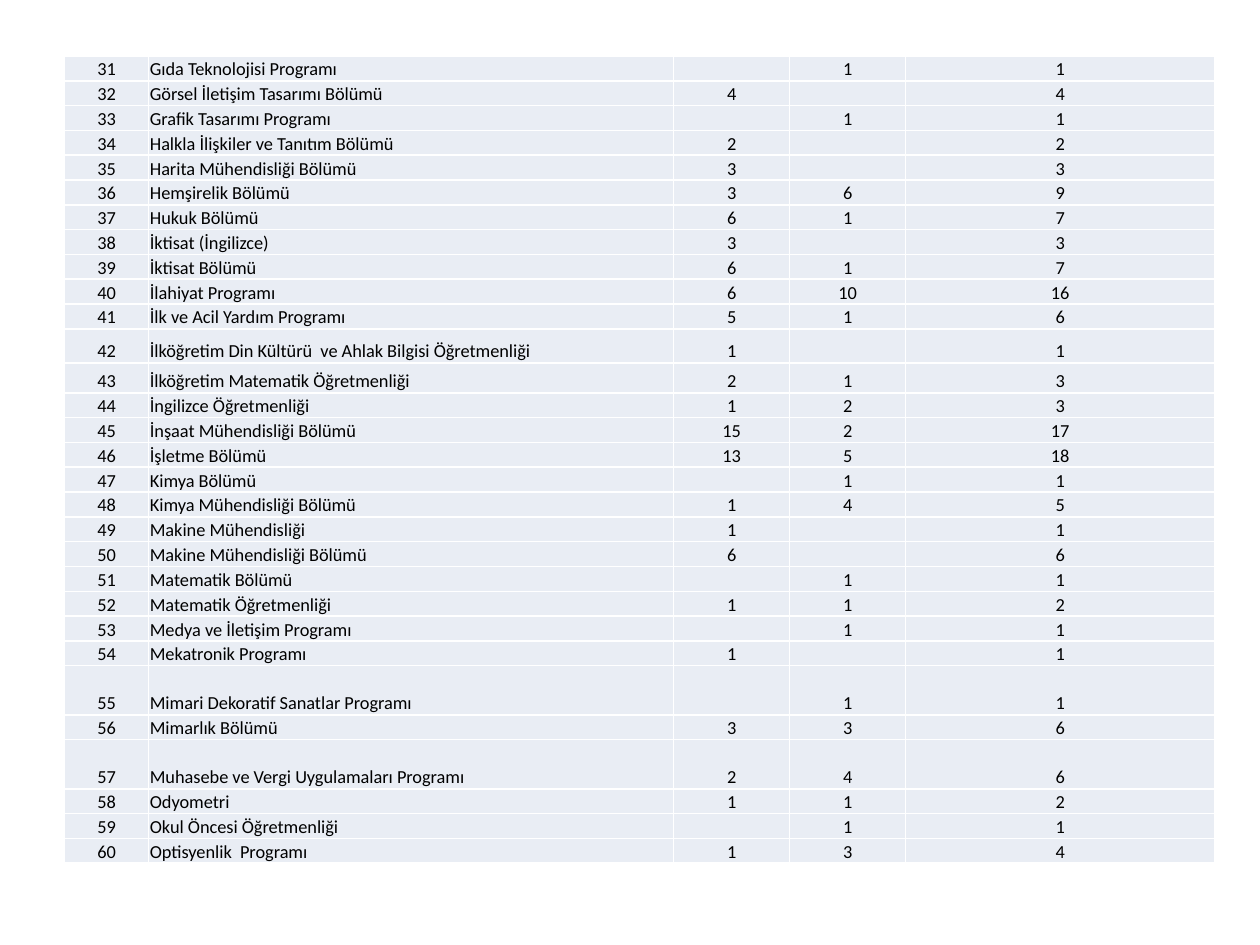
from dataclasses import dataclass

from pptx import Presentation
from pptx.dml.color import RGBColor as RGB
from pptx.enum.text import MSO_ANCHOR as Anchor, PP_ALIGN as Align
from pptx.oxml.ns import qn
from pptx.util import Pt
from lxml.etree import SubElement as Sub


@dataclass(frozen=True)
class Theme:
    font: str = "Calibri"
    size: float = 10.5
    ink: str = "000000"
    fill: str = "E9EDF4"
    rule: str = "FFFFFF"
    rule_w: float = 1
    inset: float = 0.7


# Programme, first count, second count; the last column is their sum
FIRST = 31
ROWS = [
    ("Gıda Teknolojisi Programı", 0, 1),
    ("Görsel İletişim Tasarımı Bölümü", 4, 0),
    ("Grafik Tasarımı Programı", 0, 1),
    ("Halkla İlişkiler ve Tanıtım Bölümü", 2, 0),
    ("Harita Mühendisliği Bölümü", 3, 0),
    ("Hemşirelik Bölümü", 3, 6),
    ("Hukuk Bölümü", 6, 1),
    ("İktisat (İngilizce)", 3, 0),
    ("İktisat Bölümü", 6, 1),
    ("İlahiyat Programı", 6, 10),
    ("İlk ve Acil Yardım Programı", 5, 1),
    ("İlköğretim Din Kültürü  ve Ahlak Bilgisi Öğretmenliği", 1, 0),
    ("İlköğretim Matematik Öğretmenliği", 2, 1),
    ("İngilizce Öğretmenliği", 1, 2),
    ("İnşaat Mühendisliği Bölümü", 15, 2),
    ("İşletme Bölümü", 13, 5),
    ("Kimya Bölümü", 0, 1),
    ("Kimya Mühendisliği Bölümü", 1, 4),
    ("Makine Mühendisliği", 1, 0),
    ("Makine Mühendisliği Bölümü", 6, 0),
    ("Matematik Bölümü", 0, 1),
    ("Matematik Öğretmenliği", 1, 1),
    ("Medya ve İletişim Programı", 0, 1),
    ("Mekatronik Programı", 1, 0),
    ("Mimari Dekoratif Sanatlar Programı", 0, 1),
    ("Mimarlık Bölümü", 3, 3),
    ("Muhasebe ve Vergi Uygulamaları Programı", 2, 4),
    ("Odyometri", 1, 1),
    ("Okul Öncesi Öğretmenliği", 0, 1),
    ("Optisyenlik  Programı", 1, 3),
]
COLS = [48, 300, 66.3, 66.3, 176.6]
ROW_H = 14.2
TALL = {42: 19.4, 43: 17.2, 55: 28.1, 57: 28.1}


class Deck:
    def __init__(self, theme, wide, high):
        self.theme = theme
        self.prs = Presentation()
        self.prs.slide_width, self.prs.slide_height = Pt(wide), Pt(high)
        self.slide = self.prs.slides.add_slide(self.prs.slide_layouts[6])

    def table(self, left, top, cols, highs, rows):
        frame = self.slide.shapes.add_table(
            len(rows), len(cols), Pt(left), Pt(top),
            Pt(sum(cols)), Pt(sum(highs)))
        grid = frame.table
        grid.first_row = grid.horz_banding = False
        for col, wide in zip(grid.columns, cols):
            col.width = Pt(wide)
        for row, high, vals in zip(grid.rows, highs, rows):
            row.height = Pt(high)
            for i, (cell, val) in enumerate(zip(row.cells, vals)):
                self.cell(cell, val, Align.LEFT if i == 1 else Align.CENTER)

    def cell(self, cell, val, align):
        look = self.theme
        cell.vertical_anchor = Anchor.BOTTOM
        cell.margin_left = cell.margin_right = cell.margin_top = Pt(look.inset)
        cell.margin_bottom = 0
        self.edges(cell)
        cell.fill.solid()
        cell.fill.fore_color.rgb = RGB.from_string(look.fill)
        para = cell.text_frame.paragraphs[0]
        para.alignment = align
        if val:
            run = para.add_run()
            run.text = str(val)
            run.font.name, run.font.size = look.font, Pt(look.size)
            run.font.color.rgb = RGB.from_string(look.ink)
        else:
            # An empty cell needs its own size, or the row grows
            Sub(para._p, qn("a:endParaRPr"), sz=str(int(look.size * 100)))

    def edges(self, cell):
        props = cell._tc.get_or_add_tcPr()
        for side in "LRTB":
            line = Sub(props, qn(f"a:ln{side}"), w=str(Pt(self.theme.rule_w)))
            paint = Sub(line, qn("a:solidFill"))
            Sub(paint, qn("a:srgbClr"), val=self.theme.rule)

    def save(self):
        self.prs.save("out.pptx")


def main():
    deck = Deck(Theme(), 720, 540)
    # Programme list with counts and totals
    rows = [(num, name, one, two, one + two)
            for num, (name, one, two) in enumerate(ROWS, FIRST)]
    highs = [TALL.get(row[0], ROW_H) for row in rows]
    deck.table(37, 32, COLS, highs, rows)
    deck.save()


if __name__ == "__main__":
    main()
